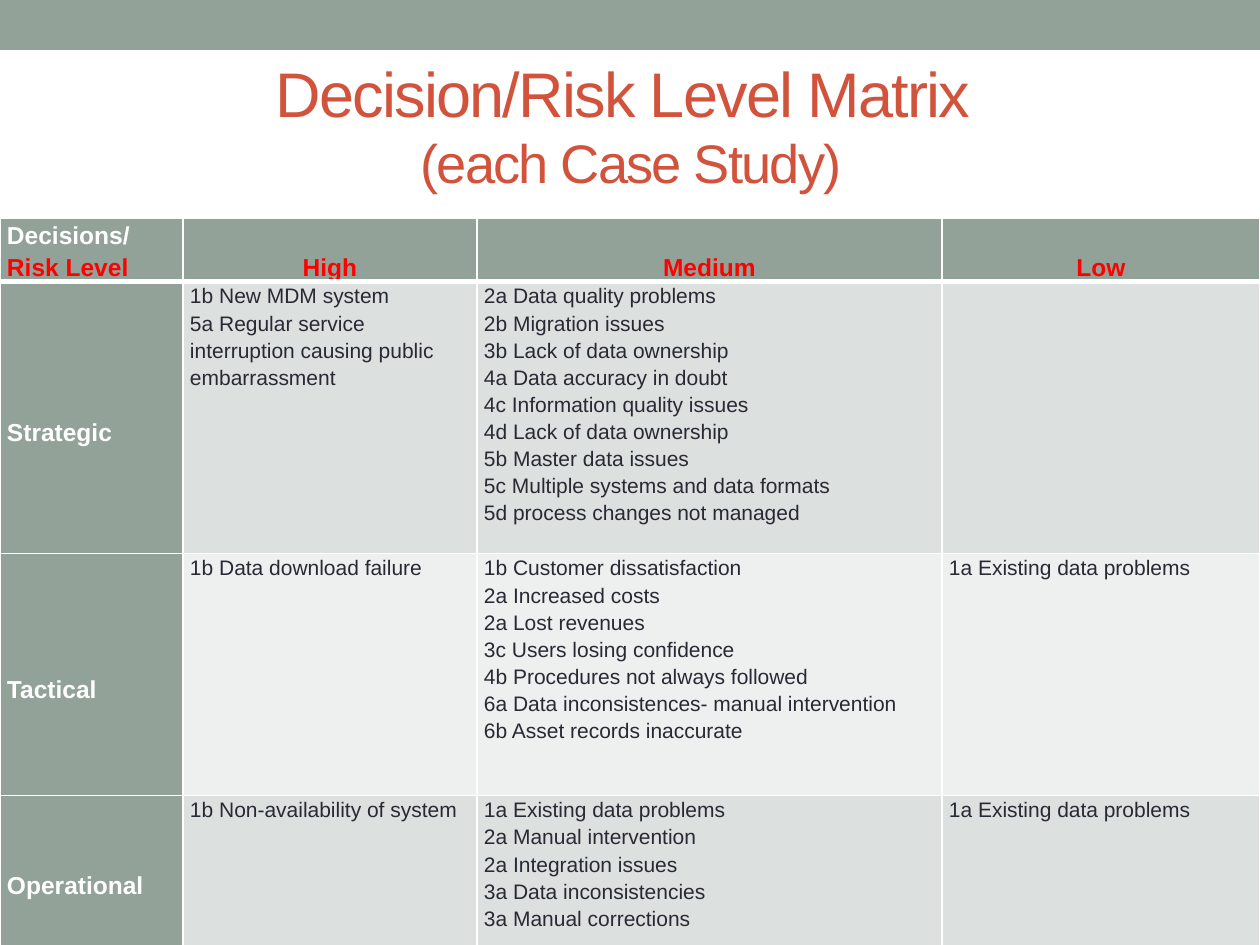
from dataclasses import dataclass

from lxml.etree import SubElement
from pptx import Presentation
from pptx.dml.color import RGBColor
from pptx.enum.shapes import MSO_SHAPE as Shape
from pptx.enum.text import MSO_ANCHOR as Anchor, MSO_AUTO_SIZE as AutoSize, PP_ALIGN as Align
from pptx.oxml.ns import qn
from pptx.util import Emu, Pt

TITLE = "Decision/Risk Level Matrix "
SUBTITLE = "(each Case Study)"
CORNER = ["Decisions/", "Risk Level"]
LEVELS = ["High", "Medium", "Low"]
DECISIONS = [
    ("Strategic", [
        ["1b New MDM system",
         "5a Regular service interruption causing public embarrassment"],
        ["2a Data quality problems", "2b Migration issues",
         "3b Lack of data ownership", "4a Data accuracy in doubt",
         "4c Information quality issues", "4d Lack of data ownership",
         "5b Master data issues", "5c Multiple systems and data formats",
         "5d process changes not managed"],
        [],
    ]),
    ("Tactical", [
        ["1b Data download failure"],
        ["1b Customer dissatisfaction", "2a Increased costs", "2a Lost revenues",
         "3c Users losing confidence", "4b Procedures not always followed",
         "6a Data inconsistences- manual intervention",
         "6b Asset records inaccurate"],
        ["1a Existing data problems"],
    ]),
    ("Operational", [
        ["1b Non-availability of system"],
        ["1a Existing data problems", "2a Manual intervention",
         "2a Integration issues", "3a Data inconsistencies",
         "3a Manual corrections"],
        ["1a Existing data problems"],
    ]),
]

SLIDE = (1260, 945)
BAND_HEIGHT = 50
TITLE_BOX = (64, 32, 1134, 185)
TABLE_TOP = 218
COLUMNS = [183, 294, 465, 318]
ROWS = [63, 272, 242, 150]
CELL_INSET = 7
LABEL_DROP = 27


@dataclass(frozen=True)
class Theme:
    font: str = "Arial"
    sage: str = "93A299"
    title: str = "D2533C"
    white: str = "FFFFFF"
    red: str = "FF0000"
    ink: str = "292934"
    bands: tuple = ("DCE0DE", "EEF0EF")
    title_size: int = 36
    subtitle_size: int = 31
    head_size: int = 14
    body_size: int = 12
    leading: float = 1.15


THEME = Theme()


def px(length):
    return Emu(length * 914400 // 126)


def paint(fill, color):
    fill.solid()
    fill.fore_color.rgb = RGBColor.from_string(color)


def add_span(para, text, size, color, bold=False):
    span = para.add_run()
    span.text = text
    span.font.name = THEME.font
    span.font.size = Pt(size)
    span.font.bold = bold
    span.font.color.rgb = RGBColor.from_string(color)
    return span


def add_band(page):
    band = page.shapes.add_shape(Shape.RECTANGLE, 0, 0, px(SLIDE[0]), px(BAND_HEIGHT))
    band.shadow.inherit = False
    paint(band.fill, THEME.sage)
    band.line.fill.background()
    page.shapes._spTree.insert(2, band._element)


def add_title(page):
    box = page.shapes.title
    box.left, box.top, box.width, box.height = map(px, TITLE_BOX)
    frame = box.text_frame
    frame.auto_size = AutoSize.NONE
    frame.word_wrap = True
    frame.vertical_anchor = Anchor.MIDDLE
    para = frame.paragraphs[0]
    para.alignment = Align.CENTER
    spans = [add_span(para, TITLE, THEME.title_size, THEME.title)]
    para.add_line_break()
    SubElement(para._p[-1], qn("a:rPr"), sz=str(THEME.title_size * 100))
    spans.append(add_span(para, SUBTITLE, THEME.subtitle_size, THEME.title))
    for span in spans:
        span.font._element.set("spc", "-100")


def set_borders(cell, top=1, bottom=1):
    properties = cell._tc.get_or_add_tcPr()
    for side, width in (("L", 1), ("R", 1), ("T", top), ("B", bottom)):
        line = SubElement(properties, qn(f"a:ln{side}"), w=str(Pt(width)))
        SubElement(SubElement(line, qn("a:solidFill")), qn("a:srgbClr"), val=THEME.white)


def fill_cell(cell, lines, fill, size, bold=False, anchor=Anchor.TOP,
              align=Align.LEFT, after=0, drop=0):
    paint(cell.fill, fill)
    cell.margin_left = cell.margin_right = px(CELL_INSET)
    cell.margin_top, cell.margin_bottom = px(drop), 0
    cell.vertical_anchor = anchor
    frame = cell.text_frame
    for index, (text, color) in enumerate(lines):
        para = frame.add_paragraph() if index else frame.paragraphs[0]
        para.alignment = align
        para.line_spacing = THEME.leading
        para.space_after = Pt(after)
        add_span(para, text, size, color, bold)


def add_matrix(page):
    table = page.shapes.add_table(
        len(ROWS), len(COLUMNS), 0, px(TABLE_TOP), px(sum(COLUMNS)), px(sum(ROWS))).table
    table.horz_banding = False
    for column, width in zip(table.columns, COLUMNS):
        column.width = px(width)
    for index, (row, height) in enumerate(zip(table.rows, ROWS)):
        row.height = px(height)
        for cell in row.cells:
            set_borders(cell, top=3 if index == 1 else 1, bottom=3 if index == 0 else 1)

    head = dict(fill=THEME.sage, size=THEME.head_size, bold=True)
    fill_cell(table.cell(0, 0), list(zip(CORNER, (THEME.white, THEME.red))), **head)
    for column, level in enumerate(LEVELS, 1):
        fill_cell(table.cell(0, column), [(level, THEME.red)], **head,
                  anchor=Anchor.BOTTOM, align=Align.CENTER, after=6)
    for row, (decision, groups) in enumerate(DECISIONS, 1):
        fill_cell(table.cell(row, 0), [(decision, THEME.white)], **head,
                  anchor=Anchor.MIDDLE, drop=LABEL_DROP)
        shade = THEME.bands[(row - 1) % len(THEME.bands)]
        for column, issues in enumerate(groups, 1):
            fill_cell(table.cell(row, column), [(issue, THEME.ink) for issue in issues],
                      shade, THEME.body_size)


def main():
    deck = Presentation()
    deck.slide_width, deck.slide_height = map(px, SLIDE)
    page = deck.slides.add_slide(deck.slide_layouts.get_by_name("Title Only"))
    paint(page.background.fill, THEME.white)
    add_band(page)
    add_title(page)
    add_matrix(page)
    deck.save("out.pptx")


if __name__ == "__main__":
    main()
